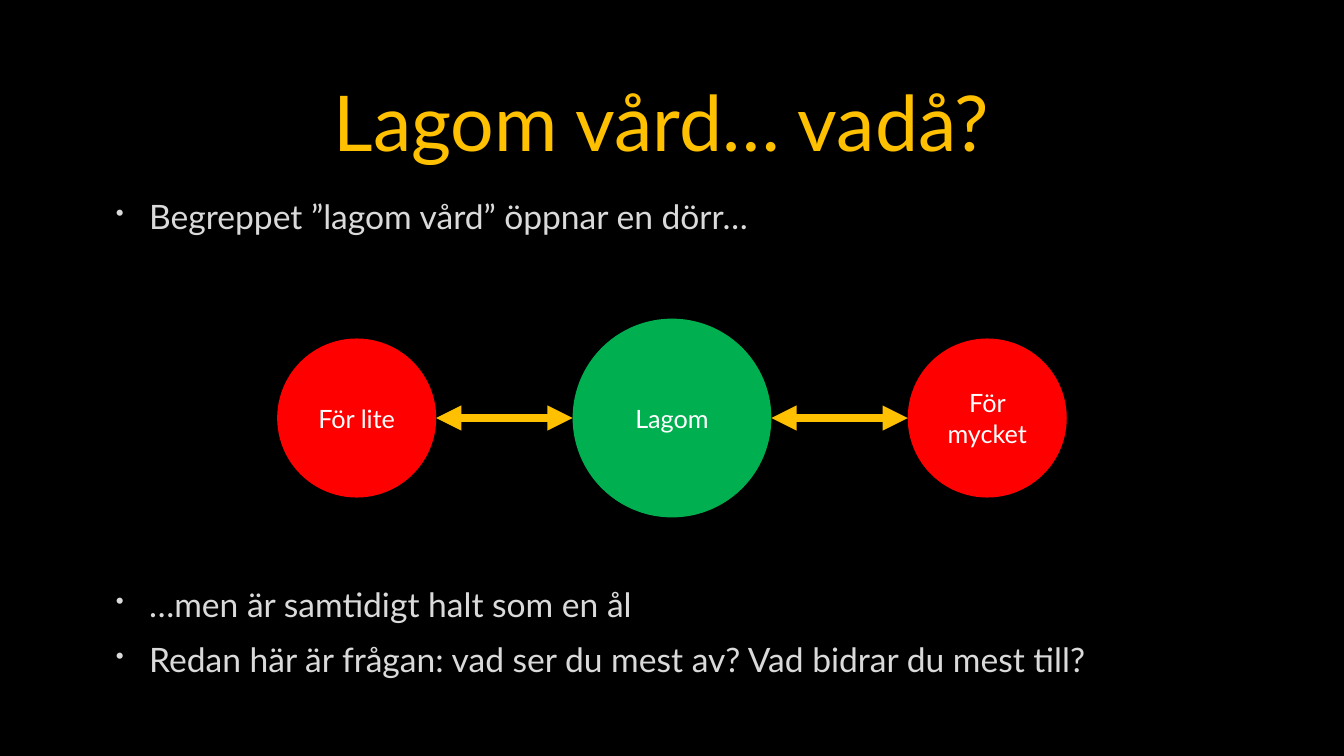
import lxml.etree
import pptx
import pptx.dml.color
import pptx.enum.shapes
import pptx.enum.text
import pptx.oxml.ns
import pptx.util

Pt = pptx.util.Pt
qn = pptx.oxml.ns.qn
ALIGN = pptx.enum.text.PP_ALIGN
ANCHOR = pptx.enum.text.MSO_ANCHOR

COLORS = {
    "background": "000000",
    "accent": "FFC000",
    "body": "DADADA",
    "lagom": "00B050",
    "extreme": "FF0000",
    "label": "FFFFFF",
}


def color(name):
    """Return the named colour as an RGBColor."""
    return pptx.dml.color.RGBColor.from_string(COLORS[name])


def add_bullet(paragraph):
    """Give a paragraph a small hanging bullet."""
    properties = paragraph._p.get_or_add_pPr()
    properties.set("marL", str(Pt(27.4)))
    properties.set("indent", str(-Pt(23.8)))
    bullet_color = lxml.etree.SubElement(properties, qn("a:buClr"))
    lxml.etree.SubElement(bullet_color, qn("a:srgbClr"), val=COLORS["body"])
    lxml.etree.SubElement(properties, qn("a:buSzPct"), val="70000")
    lxml.etree.SubElement(properties, qn("a:buChar"), char="•")


def write_text(shape, lines, size, color_name, align=ALIGN.LEFT,
               anchor=ANCHOR.TOP, bullet=False, space_after=0):
    """Write one paragraph per line into a shape."""
    frame = shape.text_frame
    frame.word_wrap = True
    frame.vertical_anchor = anchor
    for index, line in enumerate(lines):
        paragraph = frame.add_paragraph() if index else frame.paragraphs[0]
        paragraph.alignment = align
        paragraph.space_after = Pt(space_after)
        run = paragraph.add_run()
        run.text = line
        run.font.name = "Lato"
        run.font.size = Pt(size)
        run.font.color.rgb = color(color_name)
        if bullet:
            add_bullet(paragraph)


def add_title(slide, left, top, width, height, text):
    """Place the centred slide title in its box."""
    box = slide.shapes.add_textbox(Pt(left), Pt(top), Pt(width), Pt(height))
    write_text(box, [text], 55, "accent", align=ALIGN.CENTER, anchor=ANCHOR.MIDDLE)


def add_bullets(slide, left, top, width, height, lines):
    """Place a bulleted list in its box."""
    box = slide.shapes.add_textbox(Pt(left), Pt(top), Pt(width), Pt(height))
    write_text(box, lines, 24, "body", bullet=True, space_after=10.8)


def add_circle(slide, center_x, center_y, diameter, fill, label):
    """Draw a labelled circle around a centre."""
    circle = slide.shapes.add_shape(
        pptx.enum.shapes.MSO_SHAPE.OVAL, Pt(center_x - diameter / 2),
        Pt(center_y - diameter / 2), Pt(diameter), Pt(diameter))
    circle.shadow.inherit = False
    circle.fill.solid()
    circle.fill.fore_color.rgb = color(fill)
    circle.line.fill.background()
    write_text(circle, [label], 18, "label", align=ALIGN.CENTER, anchor=ANCHOR.MIDDLE)


def add_double_arrow(slide, start_x, end_x, y):
    """Draw a horizontal line with an arrowhead at both ends."""
    arrow = slide.shapes.add_connector(
        pptx.enum.shapes.MSO_CONNECTOR.STRAIGHT, Pt(start_x), Pt(y), Pt(end_x), Pt(y))
    arrow.line.width = Pt(6)
    arrow.line.color.rgb = color("accent")
    line = arrow.line._get_or_add_ln()
    for end in ("a:headEnd", "a:tailEnd"):
        lxml.etree.SubElement(line, qn(end), type="triangle")
    lxml.etree.SubElement(arrow._element.spPr, qn("a:effectLst"))


def add_balance(slide, left, top, width, height):
    """Draw the large middle circle, with a smaller one at each end of the box."""
    middle_x, middle_y = left + width / 2, top + height / 2
    small = height * 0.8
    add_circle(slide, middle_x, middle_y, height, "lagom", "Lagom")
    add_circle(slide, left + width - small / 2, middle_y, small, "extreme", "För mycket")
    add_circle(slide, left + small / 2, middle_y, small, "extreme", "För lite")
    add_double_arrow(slide, left + small, middle_x - height / 2, middle_y)
    add_double_arrow(slide, middle_x + height / 2, left + width - small, middle_y)


def main():
    """Build and save the presentation."""
    presentation = pptx.Presentation()
    presentation.slide_width, presentation.slide_height = Pt(960), Pt(540)
    slide = presentation.slides.add_slide(presentation.slide_layouts[6])
    slide.background.fill.solid()
    slide.background.fill.fore_color.rgb = color("background")
    left, width = 72, 815
    add_title(slide, left, 48.2, width, 76.3, "Lagom vård… vadå? ")
    add_bullets(slide, left, 136.2, width, 40, ["Begreppet ”lagom vård” öppnar en dörr…"])
    add_balance(slide, 198, 227.6, 564, 142)
    add_bullets(slide, left, 413.4, width, 90, [
        "…men är samtidigt halt som en ål",
        "Redan här är frågan: vad ser du mest av? Vad bidrar du mest till?",
    ])
    presentation.save("out.pptx")


if __name__ == "__main__":
    main()
